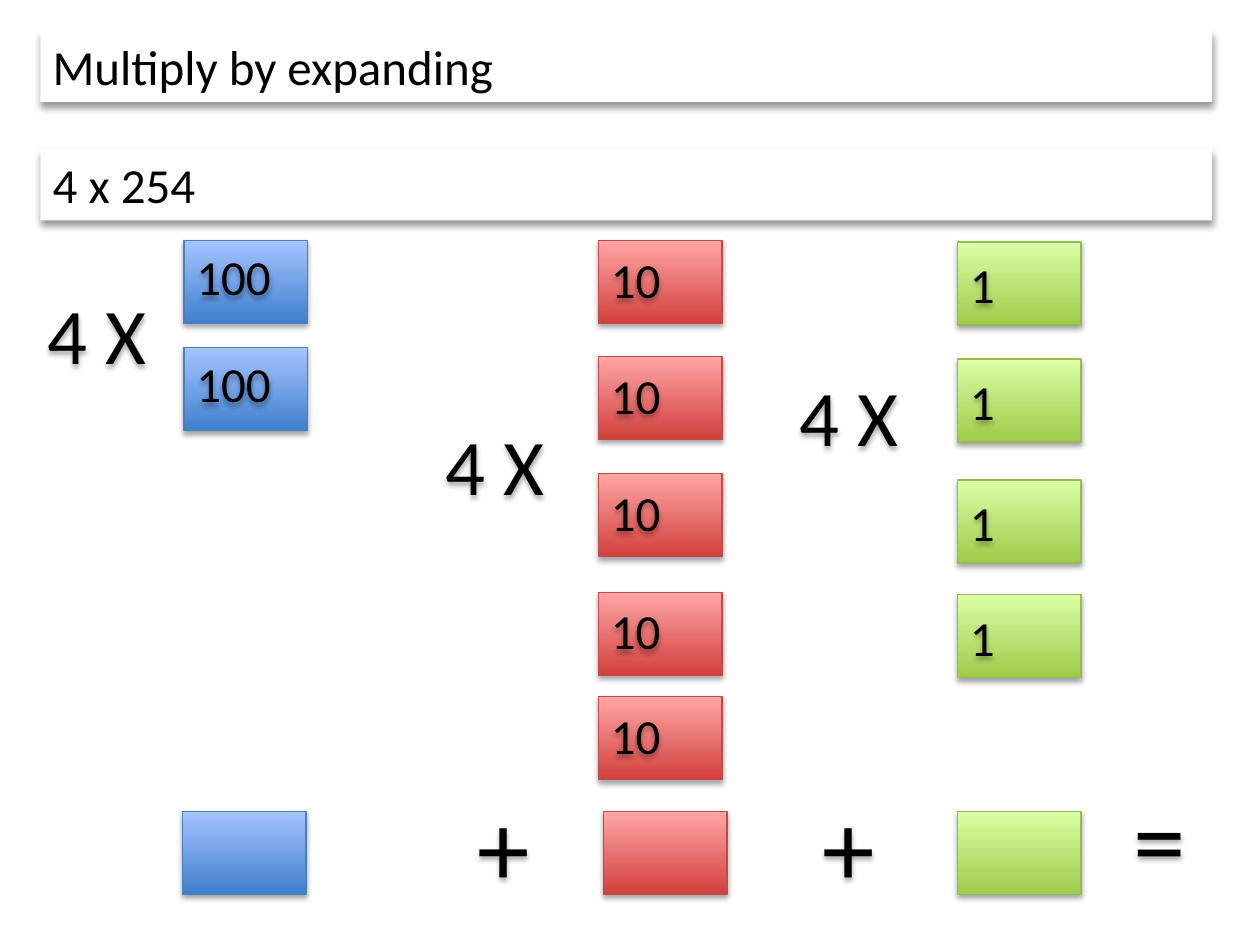
from lxml import etree
from pptx import Presentation
from pptx.dml.color import RGBColor
from pptx.enum.shapes import MSO_SHAPE
from pptx.enum.text import MSO_ANCHOR, MSO_AUTO_SIZE, PP_ALIGN
from pptx.oxml.ns import qn
from pptx.util import Inches, Pt

RECT = MSO_SHAPE.RECTANGLE
TOP = MSO_ANCHOR.TOP
GROW = MSO_AUTO_SIZE.SHAPE_TO_FIT_TEXT
LEFT = PP_ALIGN.LEFT

FONT = "Calibri"
TILE_W, TILE_H = 0.98, 0.66
LABEL_W, LABEL_H = 1.14, 0.57
BLUE = ("3F80CE", "A4C4FF", "4B7EBC")
RED = ("D1403C", "FFA6A5", "BF4C48")
GREEN = ("A0CA4A", "DAFFA5", "98B955")


def rgb(value):
    return RGBColor.from_string(value)


def add_shadow(sp, alpha=35, blur=3.15, dist=1.8):
    effects = etree.SubElement(sp._element.spPr, qn("a:effectLst"))
    shadow = etree.SubElement(
        effects, qn("a:outerShdw"), blurRad=str(Pt(blur)), dist=str(Pt(dist)),
        dir="5400000", rotWithShape="0")
    color = etree.SubElement(shadow, qn("a:srgbClr"), val="000000")
    etree.SubElement(color, qn("a:alpha"), val=str(alpha * 1000))


def write(sp, text, size):
    tf = sp.text_frame
    tf.word_wrap = True
    tf.auto_size = GROW
    tf.vertical_anchor = TOP
    p = tf.paragraphs[0]
    p.text = text
    p.alignment = LEFT
    font = p.runs[0].font
    font.name = FONT
    font.size = Pt(size)
    font.color.rgb = rgb("000000")


def add_label(slide, box, text, size):
    sp = slide.shapes.add_textbox(*map(Inches, box))
    write(sp, text, size)
    add_shadow(sp)


def add_banner(slide, box, text):
    sp = slide.shapes.add_shape(RECT, *map(Inches, box))
    sp.fill.solid()
    sp.fill.fore_color.rgb = rgb("FFFFFF")
    sp.line.fill.background()
    write(sp, text, 28)
    add_shadow(sp, 40, 4, 3)


def add_tile(slide, left, top, colors):
    sp = slide.shapes.add_shape(RECT, *map(Inches, (left, top, TILE_W, TILE_H)))
    sp.fill.gradient()
    sp.fill.gradient_angle = 90
    for stop, color, position in zip(sp.fill.gradient_stops, colors, (0, 1)):
        stop.color.rgb = rgb(color)
        stop.position = position
    sp.line.color.rgb = rgb(colors[2])
    sp.line.width = Pt(0.75)
    add_shadow(sp)


def add_place_value(slide, left, tops, value, colors, drop, times_at):
    for top in tops:
        add_tile(slide, left, top, colors)
        add_label(slide, (left, top + drop, LABEL_W, LABEL_H), value, 28)
    add_label(slide, (*times_at, LABEL_W, 0.86), "4 X", 45)


def add_sum_row(slide, top):
    for left, offset, sign in ((3.69, 0.06, "+"), (6.43, 0.06, "+"), (8.9, 0, "=")):
        add_label(slide, (left, top + offset, 0.9, 1.11), sign, 60)
    for left, colors in ((1.45, BLUE), (4.79, RED), (7.6, GREEN)):
        add_tile(slide, left, top + 0.35, colors)


def main():
    prs = Presentation()
    prs.slide_width, prs.slide_height = Inches(10), Inches(7.5)
    slide = prs.slides.add_slide(prs.slide_layouts[6])
    add_banner(slide, (0.32, 0.24, 9.3, 0.57), "Multiply by expanding")
    add_sum_row(slide, 6.09)
    add_banner(slide, (0.32, 1.18, 9.3, 0.57), "4 x 254")
    add_place_value(slide, 1.46, (1.91, 2.76), "100", BLUE, 0, (0.28, 2.22))
    add_place_value(slide, 4.75, (1.91, 2.83, 3.76, 4.7, 5.53), "10", RED,
                    0.02, (3.44, 3.26))
    add_place_value(slide, 7.6, (1.92, 2.85, 3.81, 4.72), "1", GREEN,
                    0.05, (6.25, 2.87))
    prs.save("out.pptx")


if __name__ == "__main__":
    main()
